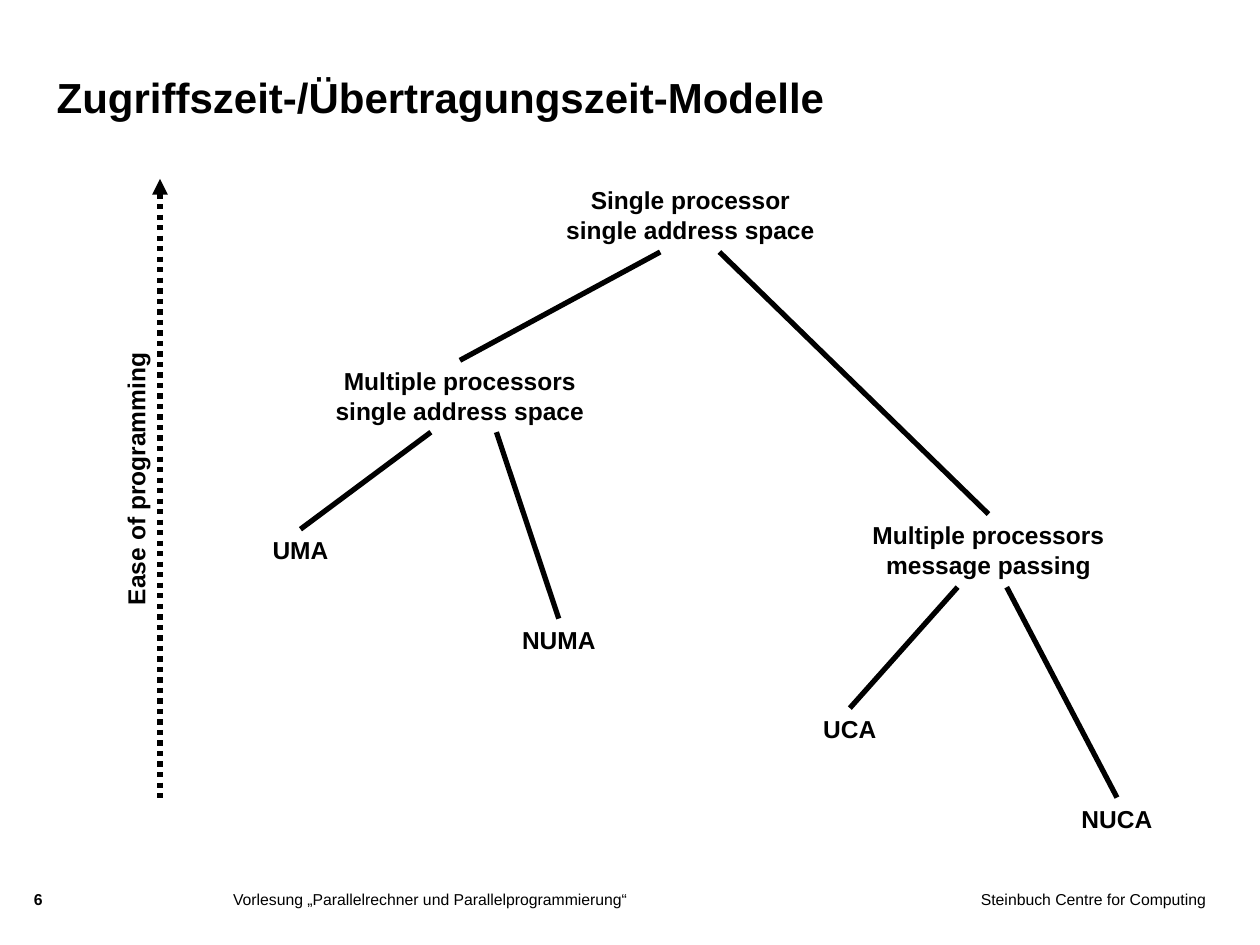
from lxml.etree import SubElement
from pptx import Presentation
from pptx.dml.color import RGBColor
from pptx.enum.dml import MSO_LINE
from pptx.enum.shapes import MSO_CONNECTOR as Conn
from pptx.enum.text import MSO_ANCHOR as Anchor, MSO_AUTO_SIZE as Fit, PP_ALIGN as Align
from pptx.oxml.ns import qn
from pptx.util import Inches, Pt

BLACK = "000000"

# name: (left, top, width, height, lines)
NODES = {
    "single": (4.39, 1.42, 2.18, 0.57, ["Single processor", "single address space"]),
    "shared": (2.56, 2.86, 2.18, 0.57, ["Multiple processors", "single address space"]),
    "uma": (2.06, 4.2, 0.65, 0.34, ["UMA"]),
    "numa": (4.04, 4.91, 0.79, 0.34, ["NUMA"]),
    "uca": (6.43, 5.62, 0.63, 0.34, ["UCA"]),
    "nuca": (8.48, 6.33, 0.77, 0.34, ["NUCA"]),
    "message": (6.82, 4.08, 2.05, 0.57, ["Multiple processors", "message passing"]),
}

# start x, start y, child node
EDGES = [
    (5.24, 2, "shared"),
    (5.71, 2, "message"),
    (3.42, 3.43, "uma"),
    (3.94, 3.43, "numa"),
    (7.99, 4.66, "nuca"),
    (7.6, 4.66, "uca"),
]


def color(code):
    return RGBColor.from_string(code)


def clear_insets(frame):
    frame.margin_left = frame.margin_right = 0
    frame.margin_top = frame.margin_bottom = 0


def write(frame, lines, size, bold=False, align=Align.LEFT):
    """Fill the first paragraph, with a line break between lines."""
    para = frame.paragraphs[0]
    para.alignment = align
    for i, line in enumerate(lines):
        if i:
            para.add_line_break()
        run = para.add_run()
        run.text = line
        font = run.font
        font.name, font.size, font.bold = "Arial", Pt(size), bold
        font.color.rgb = color(BLACK)


def add_title(slide, text):
    title = slide.shapes.title
    title.left, title.top = Inches(0.45), Inches(0.36)
    title.width, title.height = Inches(7.53), Inches(0.61)
    frame = title.text_frame
    clear_insets(frame)
    frame.word_wrap = True
    frame.vertical_anchor = Anchor.BOTTOM
    write(frame, [text], 24, True)


def add_label(slide, left, top, width, height, lines):
    box = slide.shapes.add_textbox(*map(Inches, (left, top, width, height)))
    frame = box.text_frame
    frame.word_wrap = False
    frame.auto_size = Fit.SHAPE_TO_FIT_TEXT
    write(frame, lines, 14, True, Align.CENTER)
    return box


def add_footer(slide, left, width, height, text, bold=False, align=Align.LEFT):
    box = slide.shapes.add_textbox(*map(Inches, (left, 7.06, width, height)))
    clear_insets(box.text_frame)
    box.text_frame.word_wrap = True
    write(box.text_frame, [text], 9, bold, align)


def add_line(slide, x1, y1, x2, y2):
    line = slide.shapes.add_connector(Conn.STRAIGHT, *map(Inches, (x1, y1, x2, y2)))
    line.line.width = Pt(3)
    line.line.color.rgb = color(BLACK)
    SubElement(line._element.spPr, qn("a:effectLst"))
    return line


def add_axis(slide):
    """Dotted line with its arrowhead at the top, and a turned label."""
    axis = add_line(slide, 1.27, 1.42, 1.27, 6.33)
    axis.line.dash_style = MSO_LINE.ROUND_DOT
    SubElement(axis.line._get_or_add_ln(), qn("a:headEnd"), type="triangle")
    label = add_label(slide, -0.03, 3.63, 2.22, 0.34, ["Ease of programming"])
    label.rotation = 270


def main():
    prs = Presentation()
    prs.slide_width, prs.slide_height = Inches(10), Inches(7.5)
    slide = prs.slides.add_slide(prs.slide_layouts[5])
    add_title(slide, "Zugriffszeit-/Übertragungszeit-Modelle")

    add_footer(slide, 0.27, 0.36, 0.24, "6", bold=True)
    add_footer(slide, 6.58, 2.99, 0.39, "Steinbuch Centre for Computing", align=Align.RIGHT)
    add_footer(slide, 1.85, 4.57, 0.39,
               "Vorlesung „Parallelrechner und Parallelprogrammierung“")

    boxes = {name: add_label(slide, *node) for name, node in NODES.items()}
    for x, y, child in EDGES:
        left, top, width = NODES[child][:3]
        edge = add_line(slide, x, y, left + width / 2, top)
        edge.end_connect(boxes[child], 0)
    add_axis(slide)
    prs.save("out.pptx")


if __name__ == "__main__":
    main()
